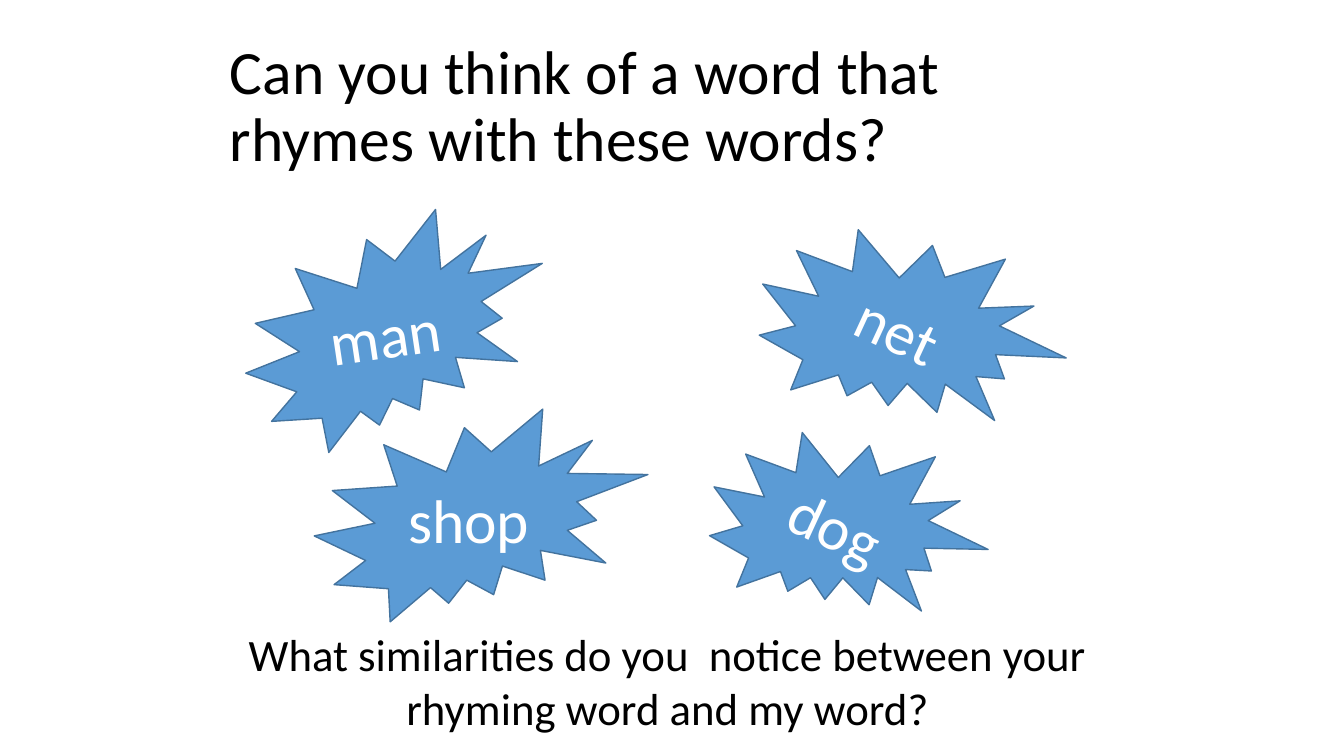
from dataclasses import dataclass

from pptx import Presentation
from pptx import util as u
from pptx.dml.color import RGBColor
from pptx.enum import shapes, text


@dataclass(frozen=True)
class Theme:
    font: str = "Calibri"
    ink: str = "000000"
    burst_fill: str = "5B9BD5"
    burst_line: str = "43739E"
    burst_ink: str = "FFFFFF"
    large: int = 44
    body: int = 32
    line: int = 1


class RhymeSlide:
    def __init__(self, prs, theme):
        self.theme = theme
        self.s = prs.slides.add_slide(prs.slide_layouts[5])

    def set_text(self, sp, words, size, color, align):
        tf = sp.text_frame
        tf.text = words
        tf.word_wrap = True
        p = tf.paragraphs[0]
        p.alignment = align
        font = p.runs[0].font
        font.name = self.theme.font
        font.size = u.Pt(size)
        font.color.rgb = RGBColor.from_string(color)
        return tf

    def title(self, words, box):
        sp = self.s.shapes.title
        sp.left, sp.top, sp.width, sp.height = map(u.Cm, box)
        tf = self.set_text(sp, words, self.theme.large, self.theme.ink, text.PP_ALIGN.LEFT)
        tf.auto_size = text.MSO_AUTO_SIZE.NONE
        tf.vertical_anchor = text.MSO_ANCHOR.MIDDLE
        tf.paragraphs[0].line_spacing = 0.9

    def burst(self, word, box, rotation):
        t = self.theme
        sp = self.s.shapes.add_shape(shapes.MSO_SHAPE.EXPLOSION2, *map(u.Cm, box))
        sp.rotation = rotation
        sp.shadow.inherit = False
        sp.fill.solid()
        sp.fill.fore_color.rgb = RGBColor.from_string(t.burst_fill)
        sp.line.color.rgb = RGBColor.from_string(t.burst_line)
        sp.line.width = u.Pt(t.line)
        tf = self.set_text(sp, word, t.large, t.burst_ink, text.PP_ALIGN.CENTER)
        tf.vertical_anchor = text.MSO_ANCHOR.MIDDLE

    def question(self, words, box):
        sp = self.s.shapes.add_textbox(*map(u.Cm, box))
        tf = self.set_text(sp, words, self.theme.body, self.theme.ink, text.PP_ALIGN.CENTER)
        tf.auto_size = text.MSO_AUTO_SIZE.SHAPE_TO_FIT_TEXT


def main():
    prs = Presentation()
    prs.slide_width, prs.slide_height = u.Cm(33.87), u.Cm(19.05)
    slide = RhymeSlide(prs, Theme())
    slide.title("Can you think of a word that rhymes with these words?",
                (5.54, 0.74, 22.86, 3.96))
    bursts = [
        ("man", (6.07, 5.46, 7.8, 5.66), 351.5),
        ("dog", (17.88, 10.74, 6.93, 5.08), 24.8),
        ("shop", (7.92, 10.31, 8.41, 5.36), 0),
        ("net", (19.08, 5.69, 7.72, 5.26), 24.8),
    ]
    for word, box, rotation in bursts:
        slide.burst(word, box, rotation)
    slide.question("What similarities do you  notice between your rhyming word and my word?",
                   (5.13, 15.67, 23.39, 3))
    prs.save("out.pptx")


if __name__ == "__main__":
    main()
